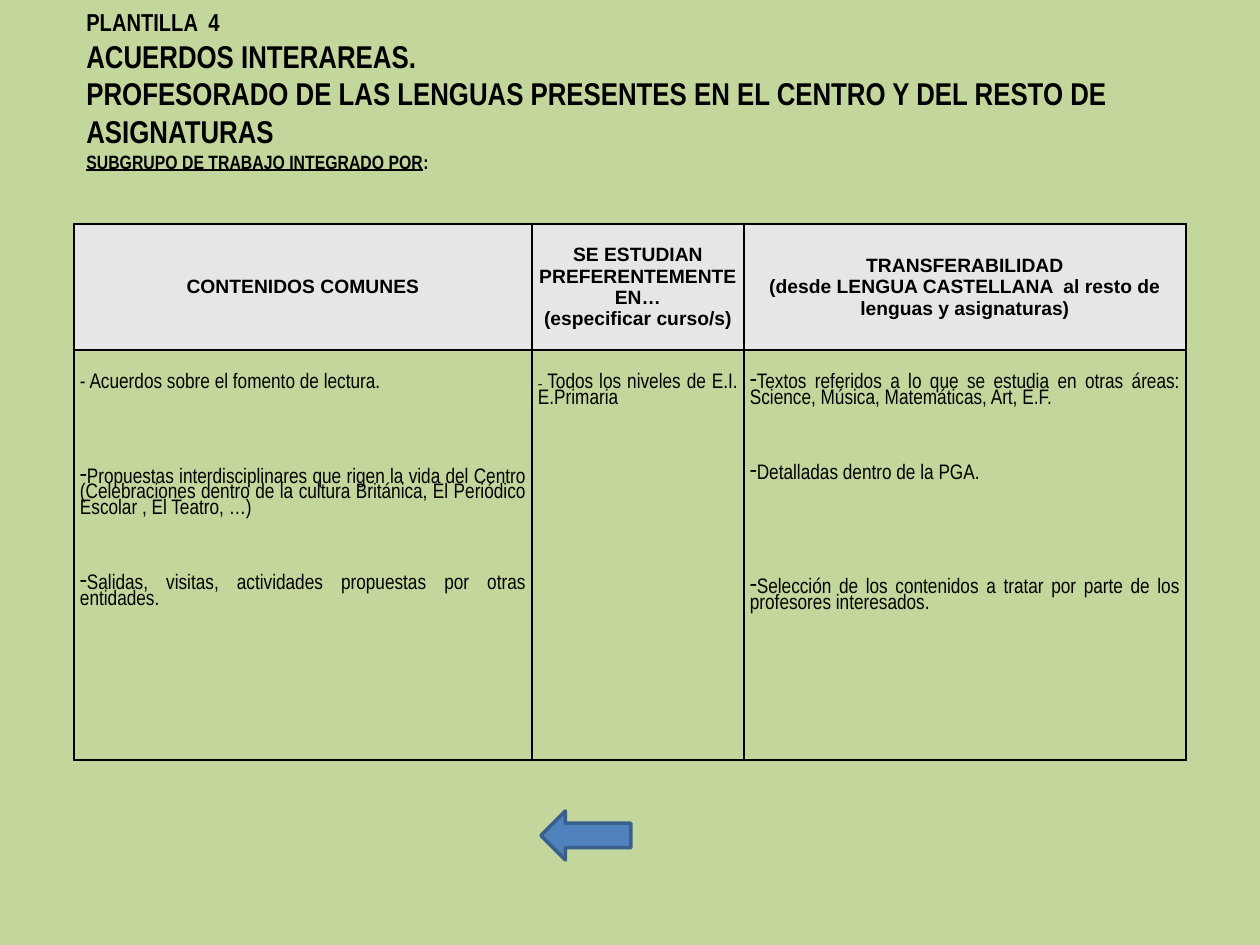
from lxml.etree import SubElement
from pptx import Presentation
from pptx.dml.color import RGBColor
from pptx.enum.shapes import MSO_SHAPE as Shape
from pptx.enum.text import MSO_ANCHOR as Anchor, PP_ALIGN as Align
from pptx.oxml import parse_xml
from pptx.oxml.ns import nsdecls, qn
from pptx.util import Emu, Pt

SCALE = 914400 / 126
GREEN = RGBColor(0xC3, 0xD6, 0x9B)
GREY = RGBColor(0xE6, 0xE6, 0xE6)
BLACK = RGBColor(0, 0, 0)
BLUE = RGBColor(0x4F, 0x81, 0xBD)
NAVY = RGBColor(0x3A, 0x5F, 0x8C)
NARROW = "Arial Narrow"
LINE_PITCH = 11.25

HEADERS = [
    ["CONTENIDOS COMUNES"],
    ["SE ESTUDIAN PREFERENTEMENTE", "EN…", "(especificar curso/s)"],
    ["TRANSFERABILIDAD",
     "(desde LENGUA CASTELLANA  al resto de lenguas y asignaturas)"],
]
AGREEMENTS = [
    [(0, "", "- Acuerdos sobre el fomento de lectura."),
     (4, "-", "Propuestas interdisciplinares que rigen la vida del Centro "
      "(Celebraciones dentro de la cultura Británica, El Periódico Escolar , "
      "El Teatro, …)"),
     (3, "-", "Salidas, visitas, actividades propuestas por otras entidades.")],
    [(0, "", "Todos los niveles de E.I. E.Primaria")],
    [(0, "-", "Textos referidos a lo que se estudia en otras áreas: Science, "
      "Música, Matemáticas, Art, E.F. "),
     (3, "-", "Detalladas dentro de la PGA."),
     (5, "-", "Selección de los contenidos a tratar por parte de los "
      "profesores interesados.")],
]


def px(length):
    return Emu(round(length * SCALE))


def style(run, size, face=NARROW, bold=False):
    run.font.size = Pt(size)
    run.font.name = face
    run.font.bold = bold
    run.font.color.rgb = BLACK


def add_heading(slide, left, top, width, height):
    frame = slide.shapes.add_textbox(
        px(left), px(top), px(width), px(height)).text_frame
    frame.word_wrap = True
    frame.vertical_anchor = Anchor.MIDDLE
    frame.margin_bottom = px(44)
    lines = [
        ("PLANTILLA  4", 14),
        ("ACUERDOS INTERAREAS.", 18),
        ("PROFESORADO DE LAS LENGUAS PRESENTES EN EL CENTRO Y DEL RESTO DE "
         "ASIGNATURAS", 18),
        ("SUBGRUPO DE TRABAJO INTEGRADO POR", 11),
    ]
    frame.text = "\n".join(text for text, _ in lines)
    for paragraph, (_, size) in zip(frame.paragraphs, lines):
        style(paragraph.runs[0], size, bold=True)
    subgroup = frame.paragraphs[-1]
    subgroup.runs[0].font.underline = True
    colon = subgroup.add_run()
    colon.text = ":"
    style(colon, 11, bold=True)


def frame_cell(cell):
    cell.margin_left = cell.margin_right = px(6)
    cell.margin_top = cell.margin_bottom = 0
    properties = cell._tc.get_or_add_tcPr()
    for place, side in enumerate(("lnL", "lnR", "lnT", "lnB")):
        properties.insert(place, parse_xml(
            f'<a:{side} {nsdecls("a")} w="12700"><a:solidFill>'
            f'<a:srgbClr val="{BLACK}"/></a:solidFill></a:{side}>'))


def fill_header(cell, lines):
    frame_cell(cell)
    cell.fill.solid()
    cell.fill.fore_color.rgb = GREY
    cell.vertical_anchor = Anchor.MIDDLE
    cell.text_frame.text = "\n".join(lines)
    for paragraph in cell.text_frame.paragraphs:
        paragraph.alignment = Align.CENTER
        style(paragraph.runs[0], 11, "Arial", True)


def fill_agreements(cell, items):
    frame_cell(cell)
    cell.fill.background()
    cell.margin_top = px(26)
    cell.text_frame.text = "\n".join(text for _, _, text in items)
    for paragraph, (gap, bullet, _) in zip(cell.text_frame.paragraphs, items):
        paragraph.alignment = Align.JUSTIFY
        paragraph.line_spacing = 0.8
        paragraph.space_before = Pt(gap * LINE_PITCH)
        style(paragraph.runs[0], 12)
        if bullet:
            properties = paragraph._p.get_or_add_pPr()
            properties.set("marL", "0")
            properties.set("indent", "0")
            SubElement(properties, qn("a:buChar"), char=bullet)


def add_dash(paragraph):
    dash = paragraph.add_run()
    dash.text = "- "
    style(dash, 8, "Times New Roman")
    paragraph.runs[0]._r.addprevious(dash._r)


def add_agreement_table(slide, left, top, widths, heights):
    table = slide.shapes.add_table(
        len(heights), len(widths), px(left), px(top),
        px(sum(widths)), px(sum(heights))).table
    table.first_row = table.horz_banding = False
    for row, height in zip(table.rows, heights):
        row.height = px(height)
    for index, width in enumerate(widths):
        table.columns[index].width = px(width)
        fill_header(table.cell(0, index), HEADERS[index])
        fill_agreements(table.cell(1, index), AGREEMENTS[index])
    add_dash(table.cell(1, 1).text_frame.paragraphs[0])


def add_back_arrow(slide, left, top, width, height):
    arrow = slide.shapes.add_shape(
        Shape.LEFT_ARROW, px(left), px(top), px(width), px(height))
    arrow.shadow.inherit = False
    arrow.fill.solid()
    arrow.fill.fore_color.rgb = BLUE
    arrow.line.color.rgb = NAVY
    arrow.line.width = Pt(2)


def main():
    deck = Presentation()
    deck.slide_width, deck.slide_height = px(1260), px(945)
    slide = deck.slides.add_slide(deck.slide_layouts[6])
    slide.background.fill.solid()
    slide.background.fill.fore_color.rgb = GREEN
    add_agreement_table(slide, 74, 224, [458, 212, 442], [126, 410])
    add_heading(slide, 74, 0, 1081, 218)
    add_back_arrow(slide, 541, 811, 90, 49)
    deck.save("out.pptx")


if __name__ == "__main__":
    main()
